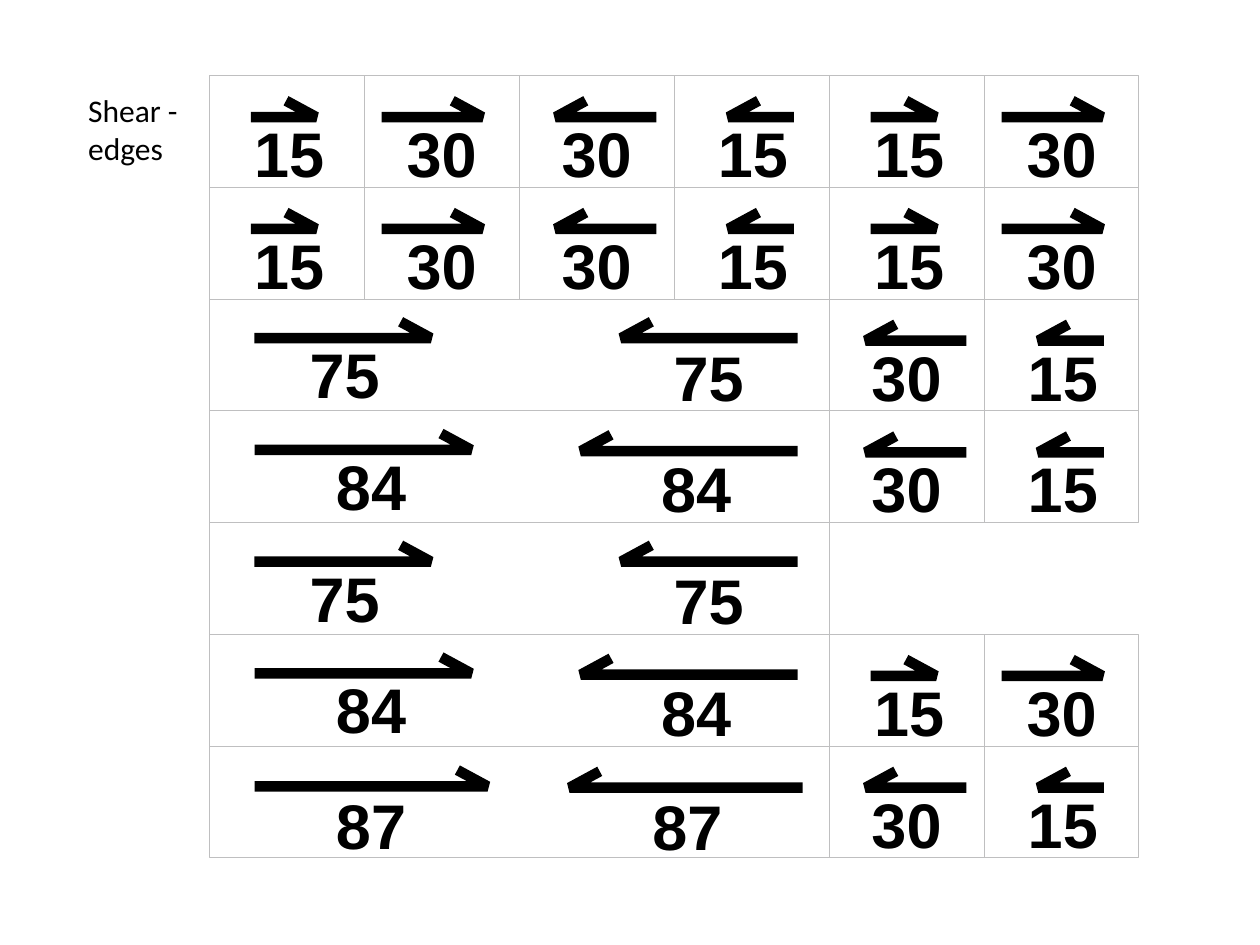
from lxml import etree
from pptx import Presentation
from pptx.dml.color import RGBColor
from pptx.enum import shapes, text
from pptx.oxml import ns
from pptx.util import Inches, Pt

# Content: each block is (first column, row, column span, half arrows)
HEADING = "Shear - edges"
OUT = ["15 right", "30 right"]
BACK = ["30 left", "15 left"]
BLOCKS = [
    (0, 0, 4, OUT + BACK),
    (0, 1, 4, OUT + BACK),
    (0, 2, 4, ["75 right", "75 left"]),
    (0, 3, 4, ["84 right", "84 left"]),
    (0, 4, 4, ["75 right", "75 left"]),
    (0, 5, 4, ["84 right", "84 left"]),
    (0, 6, 4, ["87 right", "87 left"]),
    (4, 0, 2, OUT),
    (4, 1, 2, OUT),
    (4, 2, 2, BACK),
    (4, 3, 2, BACK),
    (4, 5, 2, OUT),
    (4, 6, 2, BACK),
]

# Offsets in inches: arrow tail, arrow tip, label left, shaft y, label top
MARKS = {
    "15 right": (0.33, 0.85, 0.25, 0.33, 0.26),
    "30 right": (0.14, 0.94, 0.23, 0.33, 0.26),
    "30 left": (1.09, 0.29, 0.23, 0.33, 0.26),
    "15 left": (0.95, 0.43, 0.24, 0.33, 0.26),
    "75 right": (0.36, 1.76, 0.69, 0.31, 0.24),
    "75 left": (4.67, 3.27, 3.58, 0.31, 0.26),
    "84 right": (0.36, 2.08, 0.90, 0.31, 0.24),
    "84 left": (4.67, 2.95, 3.48, 0.32, 0.26),
    "87 right": (0.36, 2.21, 0.90, 0.32, 0.27),
    "87 left": (4.71, 2.86, 3.41, 0.33, 0.28),
}

THEME = {
    "ink": RGBColor(0x00, 0x00, 0x00),
    "grid": RGBColor(0xBF, 0xBF, 0xC0),
    "heading": ("Calibri", 18, False),
    "label": ("Arial", 36, True),
    "arrow_width": 6,
    "grid_width": 0.5,
}
LEFT, TOP = 1.66, 0.6
COL_W, ROW_H = 1.23, 0.887
BARB_X, BARB_Y = 0.24, 0.13
LABEL_W, LABEL_H = 0.77, 0.71


def style_text(sp, content, style, align):
    font, size, bold = THEME[style]
    tf = sp.text_frame
    tf.text = content
    tf.vertical_anchor = text.MSO_ANCHOR.TOP
    p = tf.paragraphs[0]
    p.alignment = align
    f = p.runs[0].font
    f.name, f.size, f.bold = font, Pt(size), bold
    f.color.rgb = THEME["ink"]
    return tf


def style_line(sp, color, width):
    sp.line.color.rgb = THEME[color]
    sp.line.width = Pt(THEME[width])


def add_block(s, x, y, span):
    sp = s.shapes.add_shape(shapes.MSO_SHAPE.RECTANGLE, Inches(x), Inches(y),
                            Inches(span * COL_W), Inches(ROW_H))
    sp.shadow.inherit = False
    sp.fill.background()
    style_line(sp, "grid", "grid_width")


def add_cell_edge(s, x, y):
    line = s.shapes.add_connector(shapes.MSO_CONNECTOR.STRAIGHT, Inches(x), Inches(y),
                                  Inches(x), Inches(y + ROW_H))
    style_line(line, "grid", "grid_width")
    etree.SubElement(line._element.spPr, ns.qn("a:effectLst"))


def add_mark(s, name, x, y):
    tail, tip, label_x, shaft_y, label_y = MARKS[name]
    value, direction = name.split()
    barb = tip - BARB_X if direction == "right" else tip + BARB_X

    # Half arrow
    fb = s.shapes.build_freeform(Inches(x + tail), Inches(y + shaft_y))
    fb.add_line_segments([(Inches(x + tip), Inches(y + shaft_y)),
                          (Inches(x + barb), Inches(y + shaft_y - BARB_Y))], close=False)
    sp = fb.convert_to_shape()
    sp.shadow.inherit = False
    sp.fill.background()
    style_line(sp, "ink", "arrow_width")
    etree.SubElement(sp.line._get_or_add_ln(), ns.qn("a:bevel"))

    # Value below it
    box = s.shapes.add_textbox(Inches(x + label_x), Inches(y + label_y),
                               Inches(LABEL_W), Inches(LABEL_H))
    tf = style_text(box, value, "label", text.PP_ALIGN.CENTER)
    tf.word_wrap = False
    tf.auto_size = text.MSO_AUTO_SIZE.SHAPE_TO_FIT_TEXT


def main():
    prs = Presentation()
    prs.slide_width, prs.slide_height = Inches(10), Inches(7.5)
    s = prs.slides.add_slide(prs.slide_layouts[5])

    # Heading
    title = s.shapes.title
    title.left, title.top = Inches(0.6), Inches(0.67)
    title.width, title.height = Inches(1.08), Inches(0.71)
    tf = style_text(title, HEADING, "heading", text.PP_ALIGN.LEFT)
    tf.word_wrap = True
    tf.auto_size = text.MSO_AUTO_SIZE.SHAPE_TO_FIT_TEXT

    # Blocks: those with one mark per column are split into cells
    for col, row, span, marks in BLOCKS:
        x, y = LEFT + col * COL_W, TOP + row * ROW_H
        split = len(marks) == span
        add_block(s, x, y, span)
        for i, name in enumerate(marks):
            cell_x = x + i * COL_W if split else x
            if split:
                add_cell_edge(s, cell_x, y)
            add_mark(s, name, cell_x, y)

    prs.save("out.pptx")


if __name__ == "__main__":
    main()
